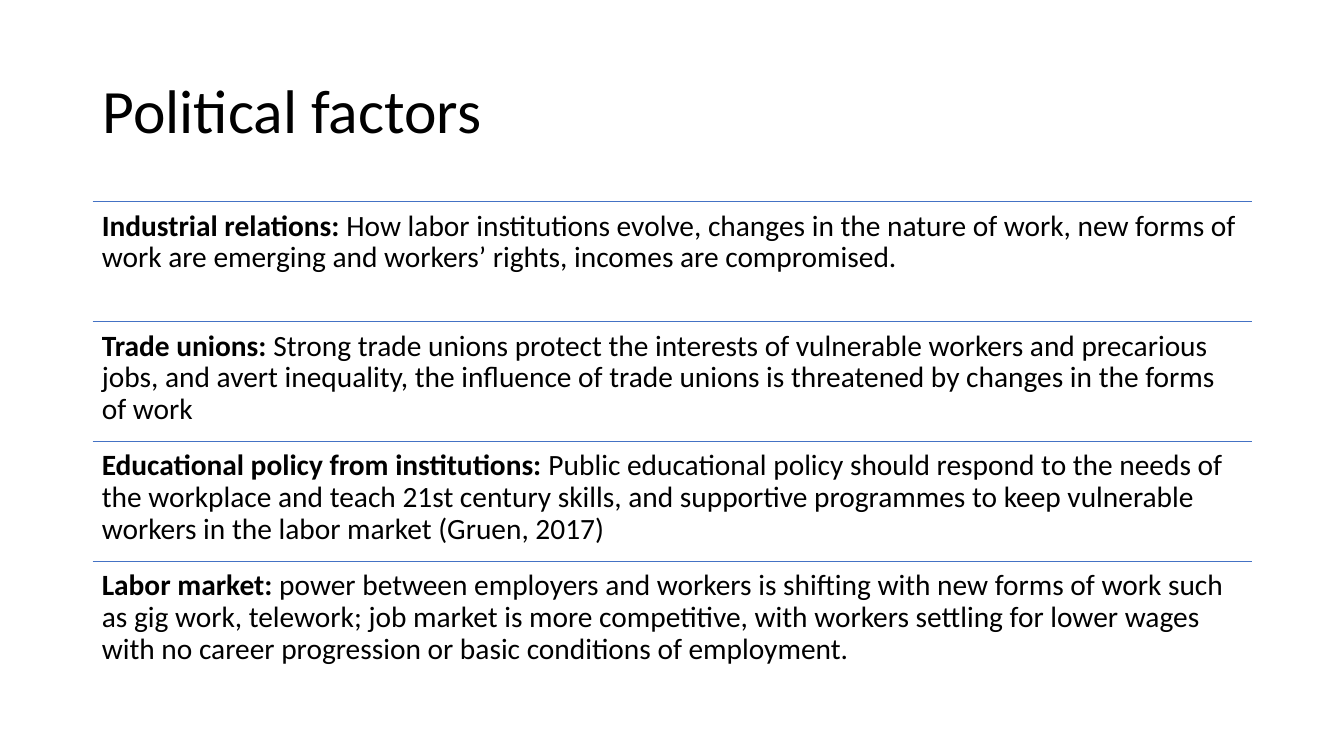
import pptx
import pptx.dml.color
import pptx.enum.shapes
import pptx.enum.text
import pptx.oxml.ns
import pptx.util
from lxml import etree
from pptx.util import Inches

TITLE = "Political factors"
FACTORS = [
    ("Industrial relations: ",
     "How labor institutions evolve, changes in the nature of work, new forms of work "
     "are emerging and workers’ rights, incomes are compromised."),
    ("Trade unions: ",
     "Strong trade unions protect the interests of vulnerable workers and precarious jobs, "
     "and avert inequality, the influence of trade unions is threatened by changes in the "
     "forms of work"),
    ("Educational policy from institutions: ",
     "Public educational policy should respond to the needs of the workplace and teach "
     "21st century skills, and supportive programmes to keep vulnerable workers in the "
     "labor market (Gruen, 2017)"),
    ("Labor market: ",
     "power between employers and workers is shifting with new forms of work such as gig "
     "work, telework; job market is more competitive, with workers settling for lower wages "
     "with no career progression or basic conditions of employment."),
]
COLORS = {"text": "000000", "rule": "4472C4", "background": "FFFFFF"}
FONT = "Calibri"
LEFT, WIDTH = 0.92, 11.5
TITLE_TOP, TITLE_HEIGHT = 0.4, 1.45
ROWS_TOP, ROW_HEIGHT = 2, 1.19


def rgb(name):
    return pptx.dml.color.RGBColor.from_string(COLORS[name])


def add_text(slide, runs, top, height, size, anchor, inset_x, inset_y):
    """Add one paragraph made of (text, bold) runs."""
    box = slide.shapes.add_textbox(Inches(LEFT), Inches(top), Inches(WIDTH), Inches(height))
    frame = box.text_frame
    frame.word_wrap = True
    frame.vertical_anchor = anchor
    frame.margin_left = frame.margin_right = Inches(inset_x)
    frame.margin_top = frame.margin_bottom = Inches(inset_y)
    paragraph = frame.paragraphs[0]
    paragraph.line_spacing = 0.9
    for text, bold in runs:
        run = paragraph.add_run()
        run.text = text
        run.font.name = FONT
        run.font.size = pptx.util.Pt(size)
        run.font.bold = bold
        run.font.color.rgb = rgb("text")


def add_rule(slide, top):
    rule = slide.shapes.add_connector(
        pptx.enum.shapes.MSO_CONNECTOR.STRAIGHT,
        Inches(LEFT), Inches(top), Inches(LEFT + WIDTH), Inches(top))
    rule.line.color.rgb = rgb("rule")
    rule.line.width = pptx.util.Pt(1)
    etree.SubElement(rule._element.spPr, pptx.oxml.ns.qn("a:effectLst"))


def main():
    presentation = pptx.Presentation()
    presentation.slide_width = Inches(13.33)
    presentation.slide_height = Inches(7.5)
    slide = presentation.slides.add_slide(presentation.slide_layouts[6])
    slide.background.fill.solid()
    slide.background.fill.fore_color.rgb = rgb("background")

    anchors = pptx.enum.text.MSO_ANCHOR
    add_text(slide, [(TITLE, False)], TITLE_TOP, TITLE_HEIGHT, size=44,
             anchor=anchors.MIDDLE, inset_x=0.1, inset_y=0.05)
    for index, (heading, detail) in enumerate(FACTORS):
        top = ROWS_TOP + index * ROW_HEIGHT
        add_rule(slide, top)
        add_text(slide, [(heading, True), (detail, False)], top, ROW_HEIGHT, size=21,
                 anchor=anchors.TOP, inset_x=0.09, inset_y=0.09)
    presentation.save("out.pptx")


if __name__ == "__main__":
    main()
